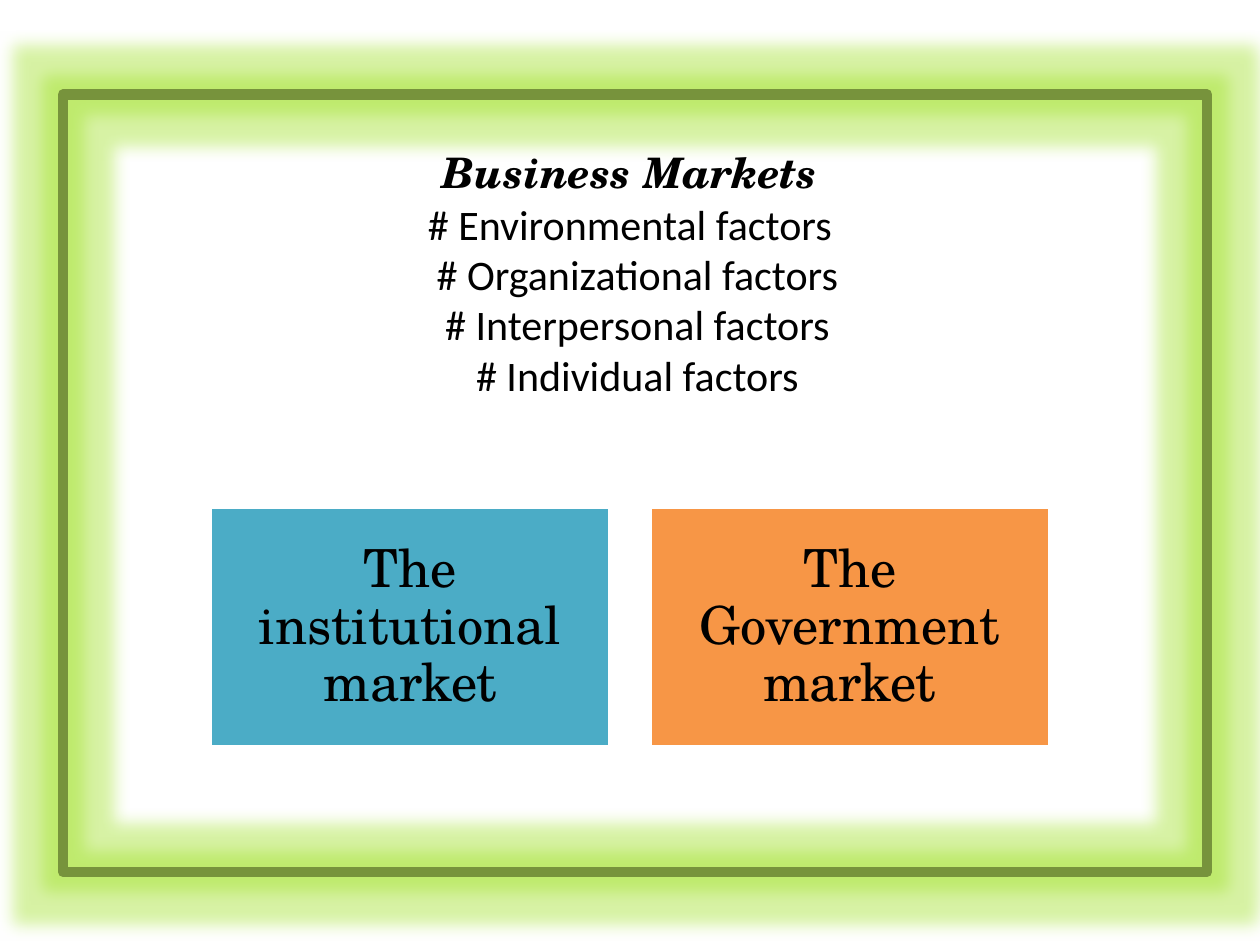
"""Build the business markets slide."""
from lxml import etree
from pptx import Presentation
from pptx.dml.color import RGBColor
from pptx.enum.shapes import MSO_SHAPE
from pptx.enum.text import MSO_ANCHOR, PP_ALIGN
from pptx.oxml import parse_xml
from pptx.util import Inches, Pt

RECT = MSO_SHAPE.RECTANGLE
MIDDLE = MSO_ANCHOR.MIDDLE
CENTER = PP_ALIGN.CENTER
NS = "http://schemas.openxmlformats.org/drawingml/2006/main"
SERIF = "TeX Gyre Schola"


def rgb(value):
    return RGBColor.from_string(value)


def set_font(font, formats):
    for name, value in formats.items():
        setattr(font, name, value)
    font.color.rgb = rgb("000000")


prs = Presentation()
prs.slide_width, prs.slide_height = Inches(10), Inches(7.5)
s = prs.slides.add_slide(prs.slide_layouts[6])

frame = s.shapes.add_shape(RECT, Inches(0.5), Inches(0.75), Inches(9.08), Inches(6.17))
frame.fill.background()
frame.line.color.rgb = rgb("77933C")
frame.line.width = Pt(6)
etree.SubElement(frame.line._get_or_add_ln(), f"{{{NS}}}round")
frame._element.spPr.append(parse_xml(
    f'<a:effectLst xmlns:a="{NS}"><a:glow rad="{Inches(0.25)}">'
    '<a:srgbClr val="9BE01C"><a:alpha val="40000"/></a:srgbClr>'
    '</a:glow></a:effectLst>'))

tb = s.shapes.add_textbox(Inches(0.83), Inches(1.15), Inches(8.33), Inches(2.05))
tf = tb.text_frame
tf.word_wrap = True
tf.margin_left = tf.margin_right = tf.margin_bottom = 0
tf.margin_top = Inches(0.01)

factors = ["Environmental", "Organizational", "Interpersonal", "Individual"]
paragraphs = [
    ("Business Markets", 0, {"name": SERIF, "size": Pt(24), "bold": True, "italic": True}),
    ("\v".join(f"# {factor} factors" for factor in factors), 0.9,
     {"name": "Calibri", "size": Pt(24)}),
]
for i, (text, before, formats) in enumerate(paragraphs):
    p = tf.add_paragraph() if i else tf.paragraphs[0]
    p.text = text
    p.alignment = CENTER
    p.space_before = Pt(before)
    pPr = p._p.get_or_add_pPr()
    pPr.set("marL", str(Inches(0.13)))
    pPr.set("indent", str(Inches(-0.12)))
    for r in p.runs:
        set_font(r.font, formats)

markets = [("The institutional market", "4BACC6"), ("The Government market", "F79646")]
for i, (text, color) in enumerate(markets):
    sp = s.shapes.add_shape(RECT, Inches(1.67 + 3.49 * i), Inches(4.03),
                            Inches(3.17), Inches(1.9))
    sp.shadow.inherit = False
    sp.fill.solid()
    sp.fill.fore_color.rgb = rgb(color)
    sp.line.color.rgb = rgb("FFFFFF")
    sp.line.width = Pt(2)
    tf = sp.text_frame
    tf.word_wrap = True
    tf.vertical_anchor = MIDDLE
    for side in ("left", "right", "top", "bottom"):
        setattr(tf, f"margin_{side}", Inches(0.12))
    p = tf.paragraphs[0]
    p.alignment = CENTER
    p.line_spacing = 0.9
    r = p.add_run()
    r.text = text
    set_font(r.font, {"name": SERIF, "size": Pt(30)})

prs.save("out.pptx")
